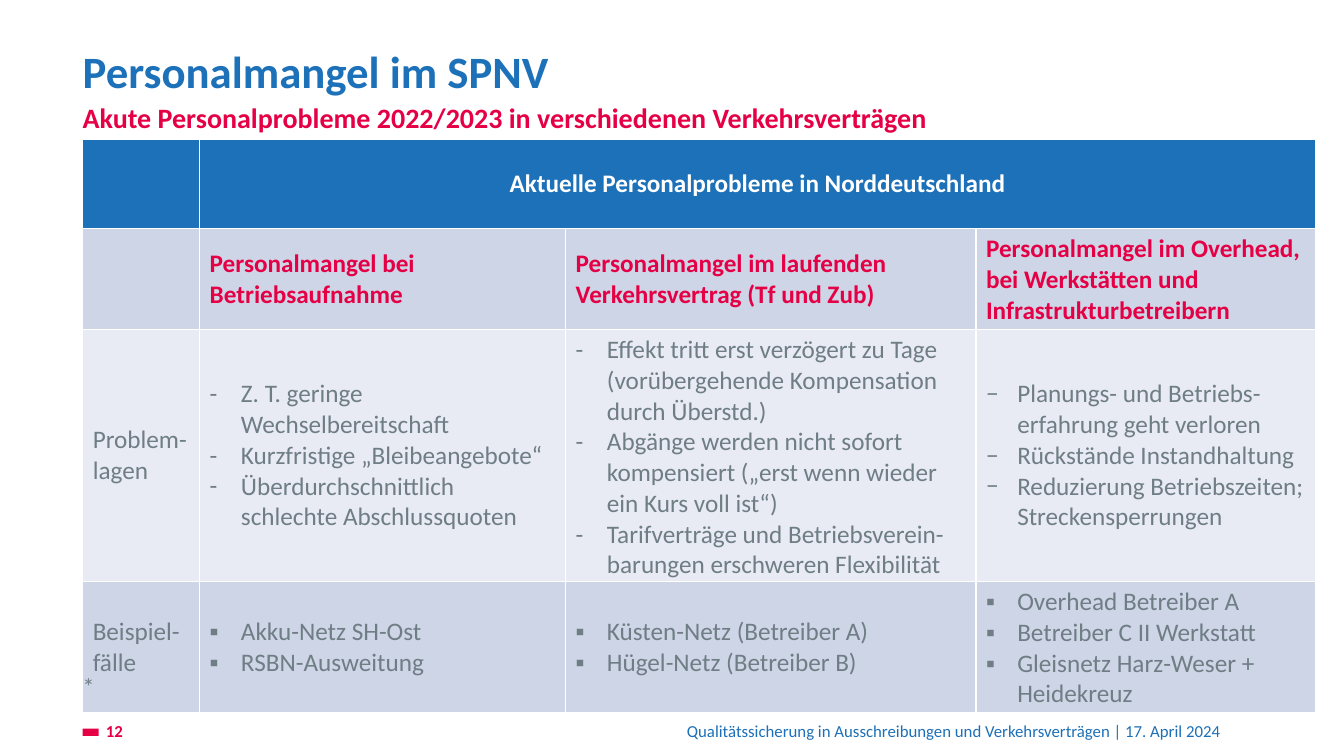
import pptx
import pptx.util
import pptx.dml.color
import pptx.enum.text
import pptx.enum.shapes
import pptx.oxml.ns
from lxml import etree

Inches, Pt = pptx.util.Inches, pptx.util.Pt
ALIGN = pptx.enum.text.PP_ALIGN
MIDDLE = pptx.enum.text.MSO_ANCHOR.MIDDLE

COLORS = {
    "blue": "1D71B8", "foot": "1D70B7", "red": "E50046", "mark": "E50045",
    "gray": "6F7D85", "white": "FFFFFF", "band": "CDD5E6", "pale": "E8EBF3",
}
LEFT = 0.82
TEXTS = [
    {"text": "Personalmangel im SPNV", "at": (LEFT, 0.52, 11.4, 0.58),
     "size": 32, "color": "blue", "bold": True, "line": Pt(32)},
    {"text": "Akute Personalprobleme 2022/2023 in verschiedenen Verkehrsverträgen",
     "at": (LEFT, 1.03, 11.4, 0.32), "size": 20, "color": "red", "bold": True, "line": 0.9},
    {"text": "12", "at": (1.05, 7.04, 0.52, 0.43),
     "size": 12, "color": "mark", "bold": True, "anchor": MIDDLE},
    {"text": "Qualitätssicherung in Ausschreibungen und Verkehrsverträgen | 17. April 2024",
     "at": (2.29, 7.04, 9.82, 0.43), "size": 12, "color": "foot",
     "align": ALIGN.RIGHT, "anchor": MIDDLE},
]
NOTE = {"text": "*", "at": (LEFT, 6.61, 7.26, 0.74), "size": 17, "color": "gray", "line": Pt(24)}

COLS = [1.16, 3.63, 4.07, 3.37]
ROWS = [
    {"high": 0.89, "fill": "blue", "color": "white", "bold": True,
     "cells": ["", "Aktuelle Personalprobleme in Norddeutschland"]},
    {"high": 1.0, "fill": "band", "color": "red", "bold": True,
     "cells": ["", "Personalmangel bei Betriebsaufnahme",
               "Personalmangel im laufenden Verkehrsvertrag (Tf und Zub)",
               "Personalmangel im Overhead, bei Werkstätten und Infrastrukturbetreibern"]},
    {"high": 2.5, "fill": "pale", "color": "gray", "marks": ["", "-", "-", "−"],
     "cells": ["Problem-lagen",
               "Z. T. geringe Wechselbereitschaft\n"
               "Kurzfristige „Bleibeangebote“\n"
               "Überdurchschnittlich schlechte Abschlussquoten",
               "Effekt tritt erst verzögert zu Tage (vorübergehende Kompensation durch Überstd.)\n"
               "Abgänge werden nicht sofort kompensiert („erst wenn wieder ein Kurs voll ist“)\n"
               "Tarifverträge und Betriebsverein-barungen erschweren Flexibilität",
               "Planungs- und Betriebs-erfahrung geht verloren\n"
               "Rückstände Instandhaltung\n"
               "Reduzierung Betriebszeiten; Streckensperrungen"]},
    {"high": 1.3, "fill": "band", "color": "gray", "marks": ["", "▪", "▪", "▪"],
     "cells": ["Beispiel-fälle",
               "Akku-Netz SH-Ost\nRSBN-Ausweitung",
               "Küsten-Netz (Betreiber A)\nHügel-Netz (Betreiber B)",
               "Overhead Betreiber A\nBetreiber C II Werkstatt\nGleisnetz Harz-Weser + Heidekreuz"]},
]


def tint(name):
    return pptx.dml.color.RGBColor.from_string(COLORS[name])


def style(par, size, color, bold=False):
    for run in par.runs:
        run.font.name = "Calibri"
        run.font.size = Pt(size)
        run.font.bold = bold
        run.font.color.rgb = tint(color)


def bullet(par, mark):
    props = par._p.get_or_add_pPr()
    props.set("marL", str(Inches(0.31)))
    props.set("indent", str(-Inches(0.31)))
    qn = pptx.oxml.ns.qn
    etree.SubElement(props, qn("a:buFont")).set("typeface", "Calibri")
    etree.SubElement(props, qn("a:buChar")).set("char", mark)


def label(slide, item):
    box = slide.shapes.add_textbox(*map(Inches, item["at"]))
    frame = box.text_frame
    frame.margin_left = frame.margin_right = frame.margin_top = frame.margin_bottom = 0
    frame.word_wrap = True
    frame.vertical_anchor = item.get("anchor", pptx.enum.text.MSO_ANCHOR.TOP)
    frame.text = item["text"]
    par = frame.paragraphs[0]
    par.alignment = item.get("align", ALIGN.LEFT)
    par.line_spacing = item.get("line")
    style(par, item["size"], item["color"], item.get("bold", False))


def grid(slide):
    high = sum(row["high"] for row in ROWS)
    table = slide.shapes.add_table(
        len(ROWS), len(COLS), Inches(LEFT), Inches(1.38), Inches(sum(COLS)), Inches(high)).table
    for col, wide in zip(table.columns, COLS):
        col.width = Inches(wide)
    for r, row in enumerate(ROWS):
        table.rows[r].height = Inches(row["high"])
        for c in range(len(COLS)):
            cell = table.cell(r, c)
            cell.fill.solid()
            cell.fill.fore_color.rgb = tint(row["fill"])
            cell.vertical_anchor = MIDDLE
        for c, text in enumerate(row["cells"]):
            frame = table.cell(r, c).text_frame
            frame.text = text
            mark = row["marks"][c] if "marks" in row else ""
            for par in frame.paragraphs:
                if mark:
                    bullet(par, mark)
                style(par, 18, row["color"], row.get("bold", False))
    head = table.cell(0, 1)
    head.merge(table.cell(0, 3))
    head.text_frame.paragraphs[0].alignment = ALIGN.CENTER


def main():
    deck = pptx.Presentation()
    deck.slide_width, deck.slide_height = Inches(13.33), Inches(7.5)
    slide = deck.slides.add_slide(deck.slide_layouts[6])
    bar = slide.shapes.add_shape(
        pptx.enum.shapes.MSO_SHAPE.RECTANGLE, *map(Inches, (LEFT, 7.23, 0.16, 0.07)))
    bar.shadow.inherit = False
    bar.fill.solid()
    bar.fill.fore_color.rgb = tint("mark")
    bar.line.fill.background()
    for item in TEXTS:
        label(slide, item)
    grid(slide)
    label(slide, NOTE)
    deck.save("out.pptx")


if __name__ == "__main__":
    main()
